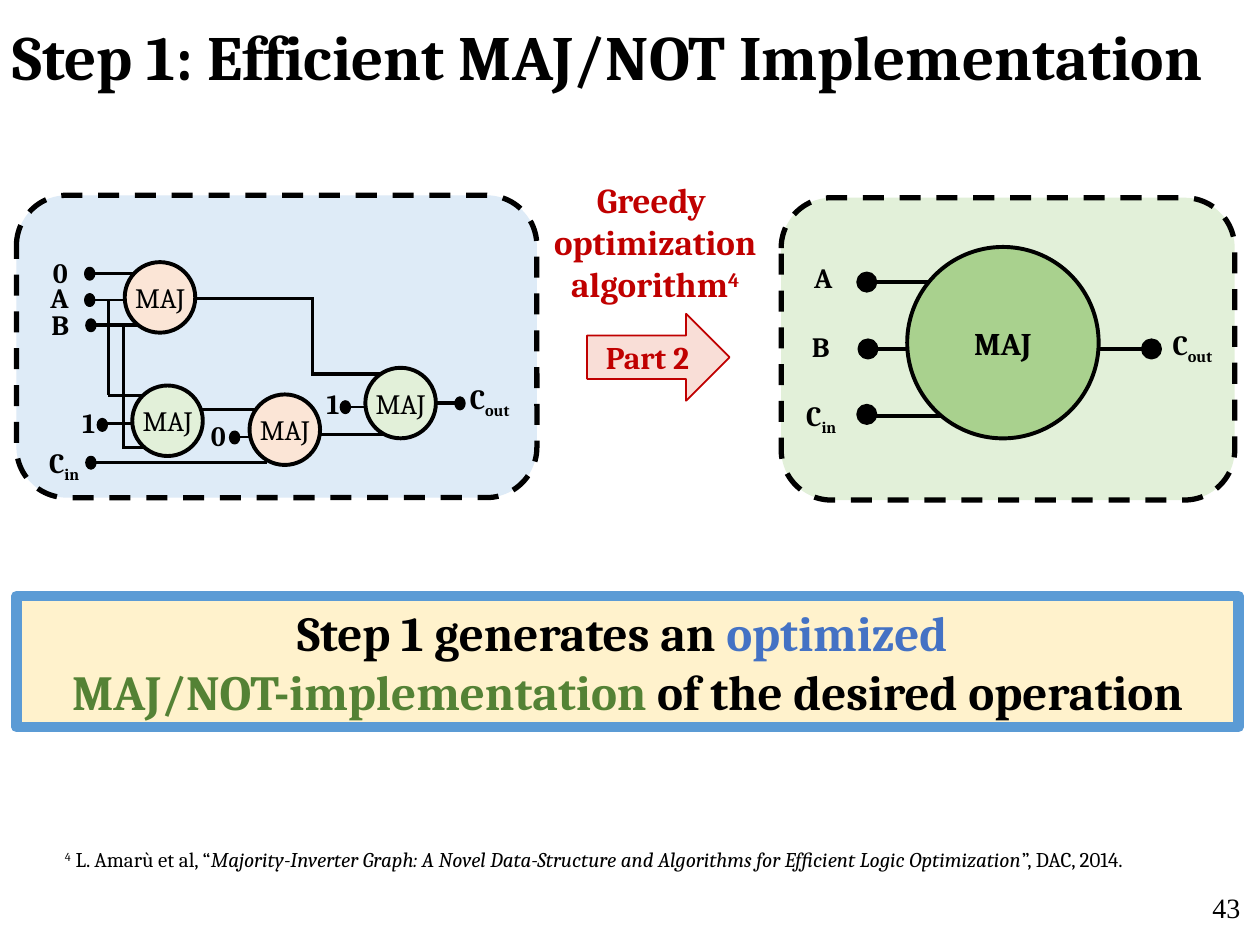
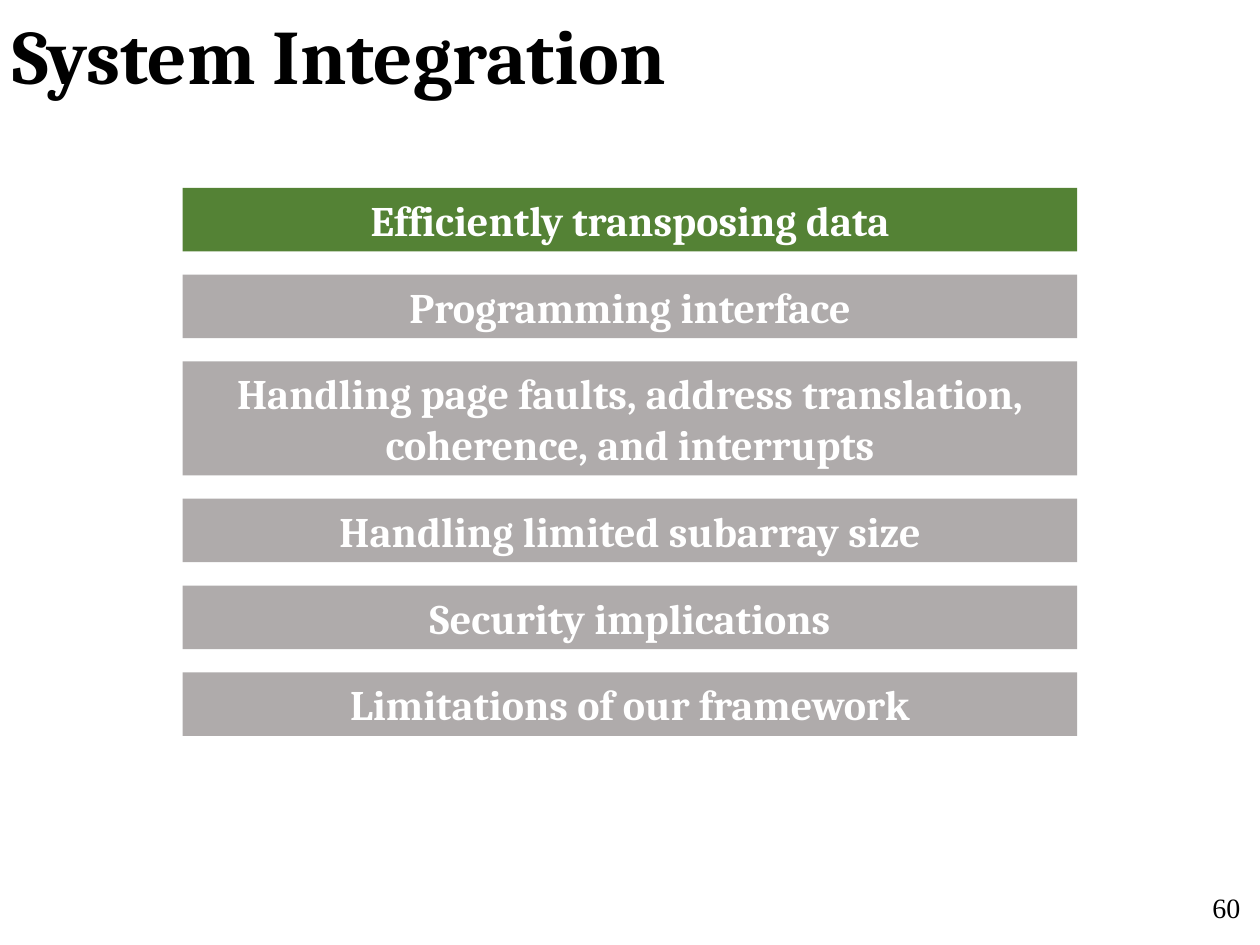
from lxml.etree import SubElement
from pptx import Presentation
from pptx.dml.color import RGBColor
from pptx.enum.dml import MSO_LINE
from pptx.enum.shapes import MSO_CONNECTOR, MSO_SHAPE
from pptx.enum.text import MSO_ANCHOR, MSO_AUTO_SIZE, PP_ALIGN
from pptx.oxml.ns import qn
from pptx.util import Pt

FONT, PLAIN = "Cambria", "Times New Roman"
BLACK, WHITE, RED = "000000", "FFFFFF", "C00000"
GREEN, GRAY, BLUE = "548235", "AFABAB", "4472C4"
PEACH, MINT, SKY, LEAF = "FBE5D6", "E2F0D9", "DEEBF7", "A9D18E"
LEFT, MID, RIGHT = PP_ALIGN.LEFT, PP_ALIGN.CENTER, PP_ALIGN.RIGHT
SUB, SUP = -25000, 30000


def hue(code):
    """Turn a hex string into a colour."""
    return RGBColor.from_string(code)


def put(para, parts):
    """Add runs, given as text or (text, colour, baseline, italic)."""
    for part in parts:
        text, color, base, slant = ((part,) if isinstance(part, str) else part) + (None,) * (
            3 if isinstance(part, str) else 4 - len(part))
        run = para.add_run()
        run.text = text
        if color:
            run.font.color.rgb = hue(color)
        if slant:
            run.font.italic = True
        if base:
            run._r.get_or_add_rPr().set("baseline", str(base))


def write(frame, lines, size, color=BLACK, bold=True, align=MID, font=FONT):
    """Fill a text frame with one paragraph for each line."""
    for i, parts in enumerate(lines):
        para = frame.add_paragraph() if i else frame.paragraphs[0]
        para.alignment = align
        para.font.name, para.font.size = font, Pt(size)
        para.font.bold, para.font.color.rgb = bold, hue(color)
        put(para, parts)


def head(slide, text, size, top, width, anchor, gap=1.0):
    """Place and format the slide title."""
    title = slide.shapes.title
    title.left, title.top, title.width, title.height = Pt(0), Pt(top), Pt(width), Pt(58.3)
    frame = title.text_frame
    frame.auto_size, frame.word_wrap = MSO_AUTO_SIZE.NONE, True
    frame.vertical_anchor = anchor
    write(frame, [[text]], size, align=LEFT)
    frame.paragraphs[0].line_spacing = gap


def shape(host, kind, box, fill, line=None, width=1, dash=False):
    """Add a filled preset shape, outlined if a line colour is given."""
    item = host.add_shape(kind, *map(Pt, box))
    item.shadow.inherit = False
    item.fill.solid()
    item.fill.fore_color.rgb = hue(fill)
    if line:
        item.line.color.rgb = hue(line)
        item.line.width = Pt(width)
        if dash:
            item.line.dash_style = MSO_LINE.DASH
    else:
        item.line.fill.background()
    return item


def note(host, box, lines, size, wrap=True, **style):
    """Add a text box."""
    frame = host.add_textbox(*map(Pt, box)).text_frame
    frame.word_wrap = wrap
    if not wrap:
        frame.auto_size = MSO_AUTO_SIZE.SHAPE_TO_FIT_TEXT
    write(frame, lines, size, **style)


def label(host, text, x, y, width=25):
    """Name a signal, with all after its first letter as subscript."""
    parts = [text[0]] + ([(text[1:], None, SUB)] if text[1:] else [])
    note(host, (x, y, width, 26.6), [parts], 16, wrap=False,
         align=LEFT if text[1:] else MID)


def wire(host, x1, y1, x2, y2, width=2):
    """Draw one straight wire."""
    line = host.add_connector(MSO_CONNECTOR.STRAIGHT, Pt(x1), Pt(y1), Pt(x2), Pt(y2))
    line.line.color.rgb = hue(BLACK)
    line.line.width = Pt(width)
    SubElement(line._element.spPr, qn("a:effectLst"))


def dot(host, x, y, width, height):
    """Draw a terminal dot."""
    shape(host, MSO_SHAPE.FLOWCHART_CONNECTOR, (x, y, width, height), BLACK, BLACK, 2)


def gate(host, x, y, side, fill, size, bold=False):
    """Draw a round majority gate."""
    item = shape(host, MSO_SHAPE.OVAL, (x, y, side, side), fill, BLACK, 2.25)
    frame = item.text_frame
    if not bold:
        frame.margin_left = frame.margin_right = frame.margin_top = frame.margin_bottom = 0
    write(frame, [["MAJ"]], size, bold=bold)


def panel(slide, box, fill):
    """Start a group with a dashed round panel."""
    host = slide.shapes.add_group_shape().shapes
    shape(host, MSO_SHAPE.ROUNDED_RECTANGLE, box, fill, BLACK, 3, True)
    return host


def page(slide, num):
    """Add the page number."""
    note(slide.shapes, (548, 505.4, 167.8, 36), [[num]], 16, bold=False,
         align=RIGHT, font=PLAIN)


def single(slide):
    """Draw the optimized circuit of one gate."""
    host = panel(slide, (446.4, 113, 259.2, 172.8), MINT)
    for x1, x2, y in ((611, 660, 199.5), (499.7, 548.6, 161.3),
                      (499.7, 548.6, 199.5), (497, 545, 237.6)):
        wire(host, x1, y, x2, y)
    for x, y in ((653, 194.4), (490.3, 156.2), (491, 194.4), (490.3, 231.8)):
        dot(host, x, y, 10, 10)
    for text, x, y, width in (("A", 458, 145.4, 25), ("B", 456.5, 185, 25),
                              ("Cin", 453.6, 224, 33.8), ("Cout", 663, 183.6, 40.3)):
        label(host, text, x, y, width)
    gate(host, 518.4, 141.1, 109.4, LEAF, 18, True)


def network(slide):
    """Draw the circuit of four gates."""
    host = panel(slide, (9.4, 111.6, 297.4, 172.8), SKY)
    for x1, x2, y in ((54, 77, 156.2), (54, 82.8, 185.8), (111.6, 179.3, 170.6),
                      (51.8, 152.6, 264.2), (180.7, 229, 248.4), (62, 81.4, 226),
                      (69.8, 84.2, 255.6), (114.5, 151.2, 234),
                      (177.8, 224.6, 213.8), (249, 265, 230.4)):
        wire(host, x1, y, x2, y)
    for x, y1, y2 in ((62, 171.4, 226), (70.6, 185, 255.6), (178.6, 170.6, 213.8)):
        wire(host, x, y1, x, y2)
    for x1, x2, y in ((51.8, 71.3, 171.4), (135.4, 142.6, 249.8),
                      (198, 209.5, 232.6), (57.6, 76.3, 242)):
        wire(host, x1, y, x2, y, 1.5)
    for x, y in ((49, 153.4), (49, 168.5), (49.7, 182.9), (49.7, 261.4),
                 (260.6, 227.5), (131.8, 247), (195.1, 229.7), (56.2, 239.8)):
        dot(host, x, y, 4.5, 6)
    for x, y, fill in ((71.3, 149.8, PEACH), (75.6, 220.3, MINT),
                       (142.6, 225.4, PEACH), (208.8, 210.2, MINT)):
        gate(host, x, y, 40.3, fill, 16)
    for text, x, y in (("0", 22, 142.6), ("A", 21.6, 157), ("B", 22, 172),
                       ("0", 112.3, 235.4), ("1", 177.8, 217.4), ("1", 38.2, 228.2)):
        label(host, text, x, y)
    label(host, "Cin", 21, 251.3, 33.8)
    label(host, "Cout", 261.4, 214.6, 40.3)


def step(slide):
    """Build the slide on the first step."""
    head(slide, "Step 1: Efficient MAJ/NOT Implementation", 36, 2.2, 725.8,
         MSO_ANCHOR.MIDDLE)
    arrow = shape(slide.shapes, MSO_SHAPE.RIGHT_ARROW, (335.5, 179.3, 81.4, 49.7),
                  "F9DED7", RED)
    write(arrow.text_frame, [["Part 2"]], 18, RED)
    claim = shape(slide.shapes, MSO_SHAPE.RECTANGLE, (9.4, 340.6, 698.4, 74.9),
                  "FFF2CC", "5B9BD5", 6)
    write(claim.text_frame, [
        ["Step 1 generates an ", ("optimized ", BLUE)],
        [("MAJ/NOT-implementation ", GREEN), "of the desired operation"]], 28)
    single(slide)
    note(slide.shapes, (299.5, 98.6, 149.8, 80),
         [["Greedy "], ["optimization"], ["algorithm", ("4", None, SUP)]], 20, color=RED)
    source = ("Majority-Inverter Graph: A Novel Data-Structure and Algorithms "
              "for Efficient Logic Optimization")
    note(slide.shapes, (27.4, 480.2, 665.3, 21.6),
         [[" ", ("4", None, SUP), " L. Amarù et al, “",
           (source, None, None, True), "”, DAC, 2014."]],
         12, wrap=False, bold=False, align=LEFT)
    network(slide)
    page(slide, "43")


def system(slide):
    """Build the slide on system integration."""
    head(slide, "System Integration", 44, 6.5, 708, MSO_ANCHOR.TOP, 0.9)
    topics = (("Efficiently transposing data", 36.3), ("Programming interface", 36.3),
              ("Handling page faults, address translation, coherence, and interrupts", 65.2),
              ("Handling limited subarray size", 36.3), ("Security implications", 36.3),
              ("Limitations of our framework", 36.3))
    top = 107.3
    for i, (text, height) in enumerate(topics):
        bar = shape(slide.shapes, MSO_SHAPE.RECTANGLE, (104.4, top, 511.2, height),
                    GRAY if i else GREEN)
        write(bar.text_frame, [[text]], 24, WHITE)
        top += height + 13.3
    page(slide, "60")


def main():
    """Build and save the deck."""
    deck = Presentation()
    deck.slide_width, deck.slide_height = Pt(720), Pt(540)
    for build in (step, system):
        build(deck.slides.add_slide(deck.slide_layouts[5]))
    deck.save("out.pptx")


if __name__ == "__main__":
    main()
